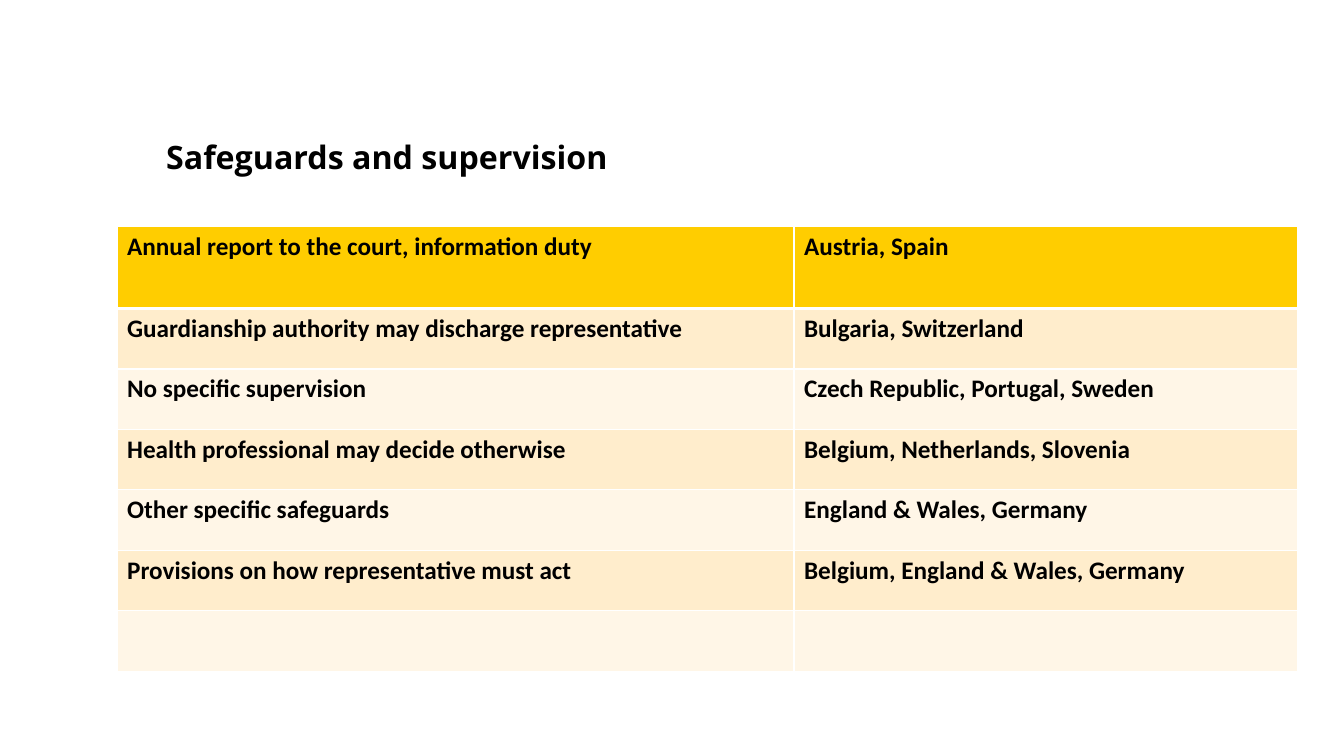
"""Build the slide on safeguards and supervision of representatives."""
import dataclasses

import lxml.etree
import pptx
import pptx.dml.color
import pptx.enum.text
import pptx.oxml.ns
import pptx.util


@dataclasses.dataclass(frozen=True)
class Theme:
    ink: str = "000000"
    header: str = "FFCD00"
    bands: tuple = ("FFEDCC", "FFF6E7")
    rule: str = "FFFFFF"
    rule_width: float = 1
    header_rule_width: float = 3
    title_font: str = "Open Sans"
    body_font: str = "Calibri"
    title_size: float = 23
    body_size: float = 18


def write(frame, text, font, size, color, bold=True):
    frame.word_wrap = True
    run = frame.paragraphs[0].add_run()
    run.text = text
    run.font.name = font
    run.font.size = pptx.util.Pt(size)
    run.font.bold = bold
    run.font.color.rgb = pptx.dml.color.RGBColor.from_string(color)


class SlideBuilder:
    COLUMNS, ROWS = 80, 50

    def __init__(self, deck, theme):
        self.theme = theme
        self.column = deck.slide_width / self.COLUMNS
        self.row = deck.slide_height / self.ROWS
        self.slide = deck.slides.add_slide(deck.slide_layouts[6])

    def across(self, columns):
        return round(columns * self.column)

    def down(self, rows):
        return round(rows * self.row)

    def title(self, text, left, top, width, height):
        heading = self.slide.shapes.add_textbox(
            self.across(left), self.down(top), self.across(width), self.down(height))
        heading.text_frame.vertical_anchor = pptx.enum.text.MSO_ANCHOR.TOP
        write(heading.text_frame, text, font=self.theme.title_font,
              size=self.theme.title_size, color=self.theme.ink)

    def rule(self, cell, side, width):
        line = lxml.etree.SubElement(
            cell._tc.get_or_add_tcPr(), pptx.oxml.ns.qn(f"a:ln{side}"),
            w=str(pptx.util.Pt(width)))
        fill = lxml.etree.SubElement(line, pptx.oxml.ns.qn("a:solidFill"))
        lxml.etree.SubElement(fill, pptx.oxml.ns.qn("a:srgbClr"), val=self.theme.rule)

    def cell(self, cell, text, row):
        theme = self.theme
        thick_sides = {0: "B", 1: "T"}
        for side in "LRTB":
            thick = thick_sides.get(row) == side
            self.rule(cell, side, theme.header_rule_width if thick else theme.rule_width)
        color = theme.bands[(row - 1) % 2] if row else theme.header
        cell.fill.solid()
        cell.fill.fore_color.rgb = pptx.dml.color.RGBColor.from_string(color)
        if text:
            write(cell.text_frame, text, font=theme.body_font,
                  size=theme.body_size, color=theme.ink)

    def table(self, records, left, top, widths, header_height, row_height):
        heights = [header_height] + [row_height] * (len(records) - 1)
        table = self.slide.shapes.add_table(
            len(records), len(widths), self.across(left), self.down(top),
            self.across(sum(widths)), self.down(sum(heights))).table
        table.horz_banding = False
        for column, width in zip(table.columns, widths):
            column.width = self.across(width)
        for index, (record, height) in enumerate(zip(records, heights)):
            table.rows[index].height = self.down(height)
            for position, text in enumerate(record):
                self.cell(table.cell(index, position), text, index)


SAFEGUARDS = [
    ("Annual report to the court, information duty", "Austria, Spain"),
    ("Guardianship authority may discharge representative", "Bulgaria, Switzerland"),
    ("No specific supervision", "Czech Republic, Portugal, Sweden"),
    ("Health professional may decide otherwise", "Belgium, Netherlands, Slovenia"),
    ("Other specific safeguards", "England & Wales, Germany"),
    ("Provisions on how representative must act", "Belgium, England & Wales, Germany"),
    ("", ""),
]


def main():
    deck = pptx.Presentation()
    deck.slide_width = pptx.util.Inches(13.34)
    deck.slide_height = pptx.util.Inches(7.5)
    builder = SlideBuilder(deck, Theme())
    builder.title("Safeguards and supervision", left=9.3, top=8.73, width=55.53, height=9.13)
    builder.table(SAFEGUARDS, left=6.97, top=15, widths=(40.3, 30),
                  header_height=5.4, row_height=4)
    deck.save("out.pptx")


if __name__ == "__main__":
    main()
